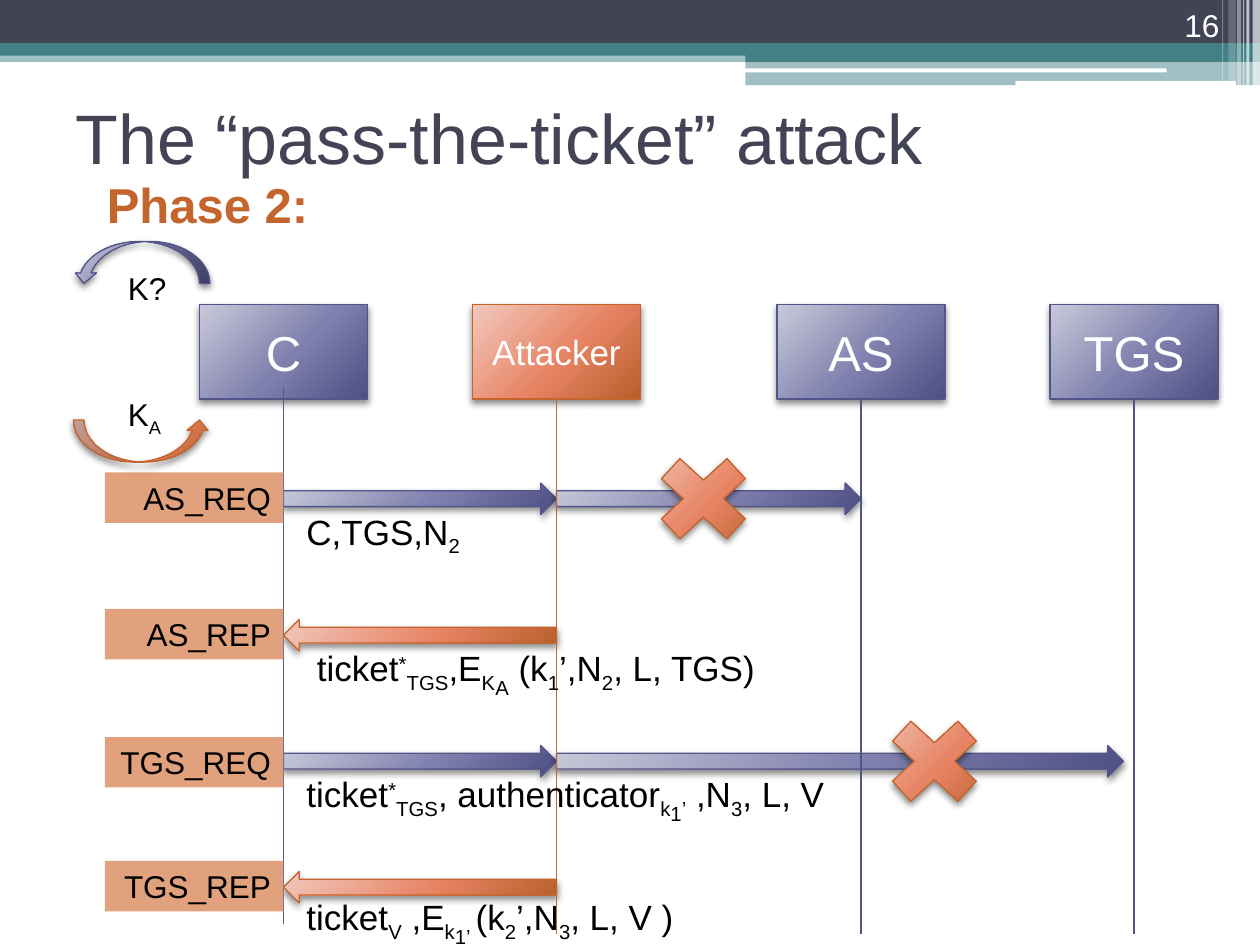
from pptx import Presentation
from pptx.dml.color import RGBColor
from pptx.enum.shapes import MSO_CONNECTOR, MSO_SHAPE
from pptx.enum.text import MSO_ANCHOR, MSO_AUTO_SIZE, PP_ALIGN
from pptx.oxml import parse_xml
from pptx.oxml.ns import nsdecls, qn
from pptx.util import Pt

RECT, ROUND = MSO_SHAPE.RECTANGLE, MSO_SHAPE.ROUNDED_RECTANGLE
ARROW, ARC = MSO_SHAPE.RIGHT_ARROW, MSO_SHAPE.CURVED_UP_ARROW
CROSS = MSO_SHAPE.MATH_MULTIPLY
LEFT, MID, RIGHT = PP_ALIGN.LEFT, PP_ALIGN.CENTER, PP_ALIGN.RIGHT
TOP, CENTRE, BOTTOM = MSO_ANCHOR.TOP, MSO_ANCHOR.MIDDLE, MSO_ANCHOR.BOTTOM

PX = 7620  # EMU in one px, 120 px to the inch
SUB, DEEP, SUP = -25, -40, 30  # baseline shifts in percent
THEME = {
    "font": "Arial", "dark": "424456", "teal": "438086", "white": "FFFFFF",
    "black": "000000", "label": "E1A17C",
    "blue": {"line": "53548A", "stops": ("C9C9DA", "7F80AE", "4D4E81")},
    "orange": {"line": "C4652D", "stops": ("F2C9BF", "E78463", "B75E2A")},
    "title": 40, "head": 28, "body": 20, "small": 18,
}
BLUE, ORANGE = THEME["blue"], THEME["orange"]
WHITE, TEAL = THEME["white"], THEME["teal"]

deck = Presentation()
deck.slide_width, deck.slide_height = 1200 * PX, 900 * PX
slide = deck.slides.add_slide(deck.slide_layouts[5])
shapes = slide.shapes


def draw(kind, box, fill, alpha=100, flip=""):
    """Add a shape with a plain colour, or with a glossy tone and a shadow."""
    shape = shapes.add_shape(kind, *[v * PX for v in box])
    props = shape._element.spPr
    for axis in flip:
        props.xfrm.set("flip" + axis, "1")
    if isinstance(fill, str):
        shape.shadow.inherit = False
        shape.fill.solid()
        shape.fill.fore_color.rgb = RGBColor.from_string(fill)
        shape.line.fill.background()
        if alpha < 100:
            tint = props.find(".//" + qn("a:srgbClr"))
            tint.append(parse_xml(f'<a:alpha {nsdecls("a")} val="{alpha * 1000}"/>'))
        return shape
    stops = "".join(
        f'<a:gs pos="{at * 1000}"><a:srgbClr val="{tone}"/></a:gs>'
        for at, tone in zip((0, 55, 100), fill["stops"]))
    props.append(parse_xml(
        f'<a:gradFill {nsdecls("a")} rotWithShape="1"><a:gsLst>{stops}</a:gsLst>'
        '<a:path path="circle"><a:fillToRect l="-40000" t="-90000" '
        'r="140000" b="190000"/></a:path></a:gradFill>'))
    shape.line.color.rgb = RGBColor.from_string(fill["line"])
    shape.line.width = Pt(0.75)
    props.append(parse_xml(
        f'<a:effectLst {nsdecls("a")}><a:outerShdw blurRad="{Pt(4)}" dist="{Pt(2)}" '
        'dir="5400000" rotWithShape="0"><a:srgbClr val="000000">'
        '<a:alpha val="45000"/></a:srgbClr></a:outerShdw></a:effectLst>'))
    return shape


def write(shape, parts, size, tone=THEME["black"], align=LEFT, anchor=TOP, wrap=True):
    """Fill a shape with one paragraph; a part is a text or (text, shift)."""
    frame = shape.text_frame
    frame.word_wrap, frame.vertical_anchor = wrap, anchor
    frame.auto_size = MSO_AUTO_SIZE.NONE
    para = frame.paragraphs[0]
    para.alignment = align
    para.font.name, para.font.size = THEME["font"], Pt(size)
    para.font.color.rgb = RGBColor.from_string(tone)
    for part in parts:
        text, shift = (part, 0) if isinstance(part, str) else part
        run = para.add_run()
        run.text = text
        if shift:
            run._r.get_or_add_rPr().set("baseline", str(shift * 1000))
    return para


# Header bands
for kind, box, fill, alpha in (
    (RECT, (0, 48, 1200, 11), TEAL, 50),
    (RECT, (0, 0, 1200, 41), THEME["dark"], 100),
    (RECT, (0, 41, 1200, 12), TEAL, 100),
    (RECT, (710, 47, 490, 12), TEAL, 100),
    (RECT, (710, 58, 490, 23), TEAL, 50),
    (ROUND, (709, 65, 402, 4), WHITE, 100),
    (ROUND, (967, 77, 210, 5), WHITE, 100),
):
    draw(kind, box, fill, alpha)

# Pale stripes at the right edge
for x, wide, high, alpha in (
    (1193, 7, 82, 65), (1187, 3, 82, 65), (1184, 1, 82, 60),
    (1178, 4, 82, 40), (1170, 7, 77, 20), (1164, 1, 77, 30),
):
    draw(RECT, (x, 0, wide, high), WHITE, alpha)

# Title, phase and page number
title = shapes.title
title.left, title.top, title.width, title.height = [v * PX for v in (60, 70, 1080, 120)]
write(title, ["The “pass-the-ticket” attack"], THEME["title"], THEME["dark"], anchor=CENTRE)
phase = shapes.add_textbox(*[v * PX for v in (90, 160, 250, 68)])
write(phase, ["Phase 2:"], THEME["head"], ORANGE["line"]).font.bold = True
page = shapes.add_textbox(*[v * PX for v in (1073, 0, 100, 48)])
write(page, ["16"], THEME["small"], WHITE, RIGHT, BOTTOM)

# Parties
PARTIES = (
    ("C", 190, BLUE, THEME["head"]), ("Attacker", 450, ORANGE, THEME["body"]),
    ("AS", 740, BLUE, THEME["head"]), ("TGS", 1000, BLUE, THEME["head"]),
)
for name, x, tone, size in PARTIES:
    write(draw(RECT, (x, 290, 160, 90), tone), [name], size, WHITE, MID, CENTRE)

# Message arrows: left, top, width
for x, y, wide, tone, flip in (
    (270, 460, 260, BLUE, ""), (530, 460, 290, BLUE, ""),
    (270, 590, 260, ORANGE, "H"),
    (270, 710, 260, BLUE, ""), (530, 710, 540, BLUE, ""),
    (270, 830, 260, ORANGE, "H"),
):
    draw(ARROW, (x, y, wide, 30), tone, flip=flip)

# Lifelines under the middle of each party
for name, x, tone, size in PARTIES:
    top = 370 if name == "C" else 380
    mid = (x + 80) * PX
    line = shapes.add_connector(MSO_CONNECTOR.STRAIGHT, mid, top * PX, mid, (top + 510) * PX)
    line.line.color.rgb = RGBColor.from_string(tone["line"])
    line.line.width = Pt(0.75)
    line._element.spPr.append(parse_xml(f'<a:effectLst {nsdecls("a")}/>'))

# Message names
for name, y in (("AS_REQ", 450), ("AS_REP", 580), ("TGS_REQ", 702), ("TGS_REP", 820)):
    write(draw(RECT, (100, y, 170, 48), THEME["label"]), [name], THEME["small"], align=RIGHT)

# Keys tried by the client
draw(ARC, (70, 400, 130, 40), ORANGE)
draw(ARC, (70, 230, 130, 40), BLUE, flip="HV")
for y, parts in ((250, ["K?"]), (370, ["K", ("A", SUB)])):
    key = shapes.add_textbox(*[v * PX for v in (110, y, 60, 48)])
    write(key, parts, THEME["small"], wrap=False)

# Message contents
for x, y, wide, parts in (
    (280, 480, 210, ["C,TGS,N", ("2", SUB)]),
    (290, 610, 520, ["ticket", ("*", SUP), ("TGS", SUB), ",E", ("K", SUB), ("A", DEEP),
                     " (k", ("1", SUB), "’,N", ("2", SUB), ", L, TGS)"]),
    (280, 730, 630, ["ticket", ("*", SUP), ("TGS", SUB), ", authenticator", ("k", SUB),
                     ("1", DEEP), ("’", SUB), " ,N", ("3", SUB), ", L, V"]),
    (280, 847, 450, ["ticket", ("V", SUB), " ,E", ("k", SUB), ("1’ ", DEEP),
                     "(k", ("2", SUB), "’,N", ("3", SUB), ", L, V )"]),
):
    note = shapes.add_textbox(*[v * PX for v in (x, y, wide, 53)])
    write(note, parts, THEME["body"])

# Blocked messages
for x, y in ((610, 420), (830, 670)):
    draw(CROSS, (x, y, 120, 110), ORANGE)

deck.save("out.pptx")
